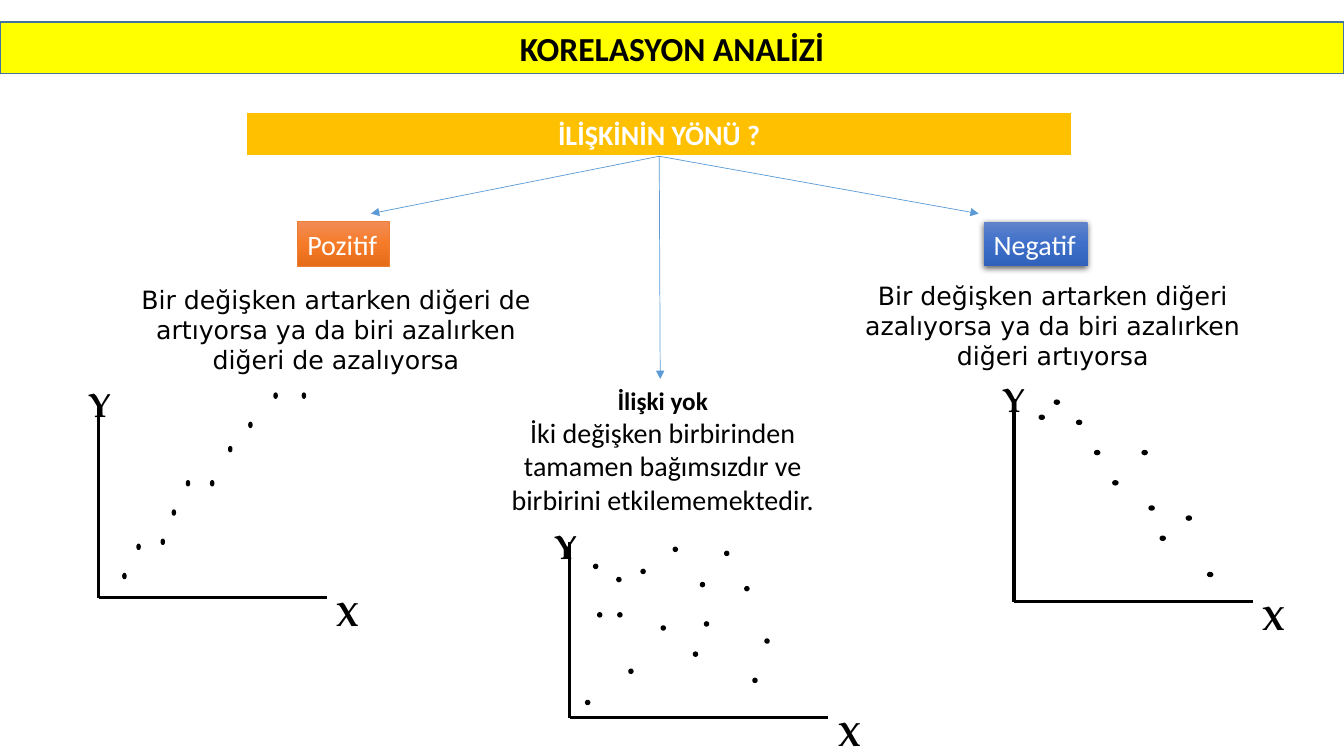
from copy import deepcopy

from lxml import etree
from pptx import Presentation
from pptx.dml.color import RGBColor
from pptx.enum.shapes import MSO_CONNECTOR, MSO_SHAPE
from pptx.enum.text import MSO_ANCHOR, MSO_AUTO_SIZE, PP_ALIGN
from pptx.oxml.ns import qn
from pptx.util import Pt

RECT, OVAL = MSO_SHAPE.RECTANGLE, MSO_SHAPE.OVAL
STRAIGHT = MSO_CONNECTOR.STRAIGHT
LEFT, CENTER = PP_ALIGN.LEFT, PP_ALIGN.CENTER
MIDDLE, TOP = MSO_ANCHOR.MIDDLE, MSO_ANCHOR.TOP
GROW = MSO_AUTO_SIZE.SHAPE_TO_FIT_TEXT
BLACK, WHITE = "000000", "FFFFFF"
BODY, EXPLAIN, AXIS = "Calibri", "DejaVu Sans", "TeX Gyre Pagella"
rgb = RGBColor.from_string


def write(sp, lines, font, color=BLACK, align=CENTER, anchor=TOP, wrap=True):
    """Fill a shape with paragraphs given as (text, size, bold)."""
    tf = sp.text_frame
    tf.word_wrap = wrap
    tf.auto_size = GROW
    tf.vertical_anchor = anchor
    for i, (text, size, bold) in enumerate(lines):
        p = tf.paragraphs[0] if i == 0 else tf.add_paragraph()
        p.text = text
        p.alignment = align
        p.font.name = font
        p.font.size = Pt(size)
        p.font.bold = bold
        p.font.color.rgb = rgb(color)


def add_line(shapes, start, end, color, width, arrow=False):
    cxn = shapes.add_connector(STRAIGHT, *map(Pt, start + end))
    cxn.line.color.rgb = rgb(color)
    cxn.line.width = Pt(width)
    spPr = cxn._element.spPr
    if arrow:
        etree.SubElement(spPr.find(qn("a:ln")), qn("a:tailEnd"), type="triangle")
    etree.SubElement(spPr, qn("a:effectLst"))


prs = Presentation()
prs.slide_width, prs.slide_height = Pt(960), Pt(540)
s = prs.slides.add_slide(prs.slide_layouts[6])

# Title and question bars: box, fill, line, line width, text, size, text colour
bars = [
    ((0, 15.8, 960, 36.7), "FFFF00", "43739E", 1, "KORELASYON ANALİZİ", 24, BLACK),
    ((175.7, 80, 590.4, 31.7), "FFC000", WHITE, 1.5, "İLİŞKİNİN YÖNÜ ?", 20, WHITE),
]
for box, fill, line, width, text, size, color in bars:
    sp = s.shapes.add_shape(RECT, *map(Pt, box))
    sp.shadow.inherit = False
    sp.fill.solid()
    sp.fill.fore_color.rgb = rgb(fill)
    sp.line.color.rgb = rgb(line)
    sp.line.width = Pt(width)
    write(sp, [(text, size, True)], BODY, color, anchor=MIDDLE)

# Direction tags: box, gradient, line, text
tags = [
    ((212.4, 158.4, 65.5, 31.7), ("F18C57", "F67B28", "E56C19"), "ED7D31", "Pozitif"),
    ((702.7, 158.4, 74.2, 31.7), ("6183CB", "3E70CA", "3062BB"), None, "Negatif"),
]
for box, gradient, line, text in tags:
    sp = s.shapes.add_shape(RECT, *map(Pt, box))
    sp.shadow.inherit = False
    sp.fill.gradient()
    sp.fill.gradient_angle = 270
    spPr = sp._element.spPr
    gs_list = spPr.find(qn("a:gradFill")).find(qn("a:gsLst"))
    gs_list.append(deepcopy(gs_list[0]))
    for stop, color, position in zip(sp.fill.gradient_stops, gradient, (0, 0.5, 1)):
        stop.color.rgb = rgb(color)
        stop.position = position
    if line:
        sp.line.color.rgb = rgb(line)
        sp.line.width = Pt(0.5)
    else:
        sp.line.fill.background()
        shadow = etree.SubElement(
            spPr.find(qn("a:effectLst")), qn("a:outerShdw"),
            blurRad=str(Pt(4.5)), dist=str(Pt(1.5)), dir="5400000", rotWithShape="0")
        color = etree.SubElement(shadow, qn("a:srgbClr"), val=BLACK)
        etree.SubElement(color, qn("a:alpha"), val="63000")
    write(sp, [(text, 20, False)], BODY, WHITE, LEFT, MIDDLE, wrap=False)

for tip in [(265, 152.6), (699.1, 152.6), (471.6, 270.7)]:
    add_line(s.shapes, (470.9, 111.6), tip, "5B9BD5", 0.5, arrow=True)

explanations = [
    ((79.2, 199.4, 321.8, 72.7), EXPLAIN,
     [("Bir değişken artarken diğeri de artıyorsa ya da biri azalırken "
       "diğeri de azalıyorsa", 18, False)]),
    ((591.1, 196.6, 321.8, 72.7), EXPLAIN,
     [("Bir değişken artarken diğeri azalıyorsa ya da biri azalırken "
       "diğeri artıyorsa", 18, False)]),
    ((356.4, 271.4, 234, 101.5), BODY,
     [("İlişki yok", 18, True),
      ("İki değişken birbirinden tamamen bağımsızdır ve birbirini "
       "etkilememektedir.", 20, False)]),
]
for box, font, lines in explanations:
    write(s.shapes.add_textbox(*map(Pt, box)), lines, font)

# Scatter sketches: axes (left, top, right, bottom), label size, dot size, dot centres
scatters = [
    ((70.6, 288, 233.3, 427), (17.3, 20.9), (2.2, 3.6),
     [(88.9, 411.5), (99, 390.6), (116.3, 387), (124.2, 366.1), (134.3, 345.2),
      (151.6, 345.2), (164.5, 320.8), (178.9, 303.5), (196.9, 282.6), (217.1, 282.6)]),
    ((724.3, 285.1, 895, 429.8), (18, 21.6), (3.6, 2.9),
     [(744.1, 298.1), (754.9, 287.3), (770.8, 301.7), (783.7, 323.3), (796.7, 344.9),
      (817.6, 323.3), (822.6, 362.9), (830.5, 384.5), (849.2, 370.1), (864.4, 410.4)]),
    ((406.8, 387.4, 591.8, 512.6), (20.2, 18.7), (2.9, 2.9),
     [(419.8, 501.8), (425.5, 404.6), (428.4, 439.2), (442.1, 414), (442.8, 439.2),
      (450.7, 479.5), (459.4, 408.2), (473.8, 448.6), (482.4, 392.4), (496.8, 467.3),
      (501.8, 417.6), (504.7, 445.7), (519.1, 395.3), (533.5, 420.5), (539.3, 486),
      (547.9, 457.9)]),
]
for (left, top, right, bottom), (label_w, label_h), (dot_w, dot_h), dots in scatters:
    shapes = s.shapes.add_group_shape().shapes
    for end in [(left, top), (right, bottom)]:
        add_line(shapes, (left, bottom), end, BLACK, 2.25)
    labels = [("X", right, bottom - 7), ("Y", left - label_w + 2.5, top - label_h + 3.6)]
    for text, x, y in labels:
        sp = shapes.add_textbox(Pt(x), Pt(y), Pt(label_w), Pt(label_h))
        write(sp, [(text, 24, True)], AXIS)
    for x, y in dots:
        sp = shapes.add_shape(OVAL, Pt(x - dot_w / 2), Pt(y - dot_h / 2),
                              Pt(dot_w), Pt(dot_h))
        sp.shadow.inherit = False
        sp.fill.solid()
        sp.fill.fore_color.rgb = rgb(BLACK)
        sp.line.color.rgb = rgb(BLACK)
        sp.line.width = Pt(1)

prs.save("out.pptx")
